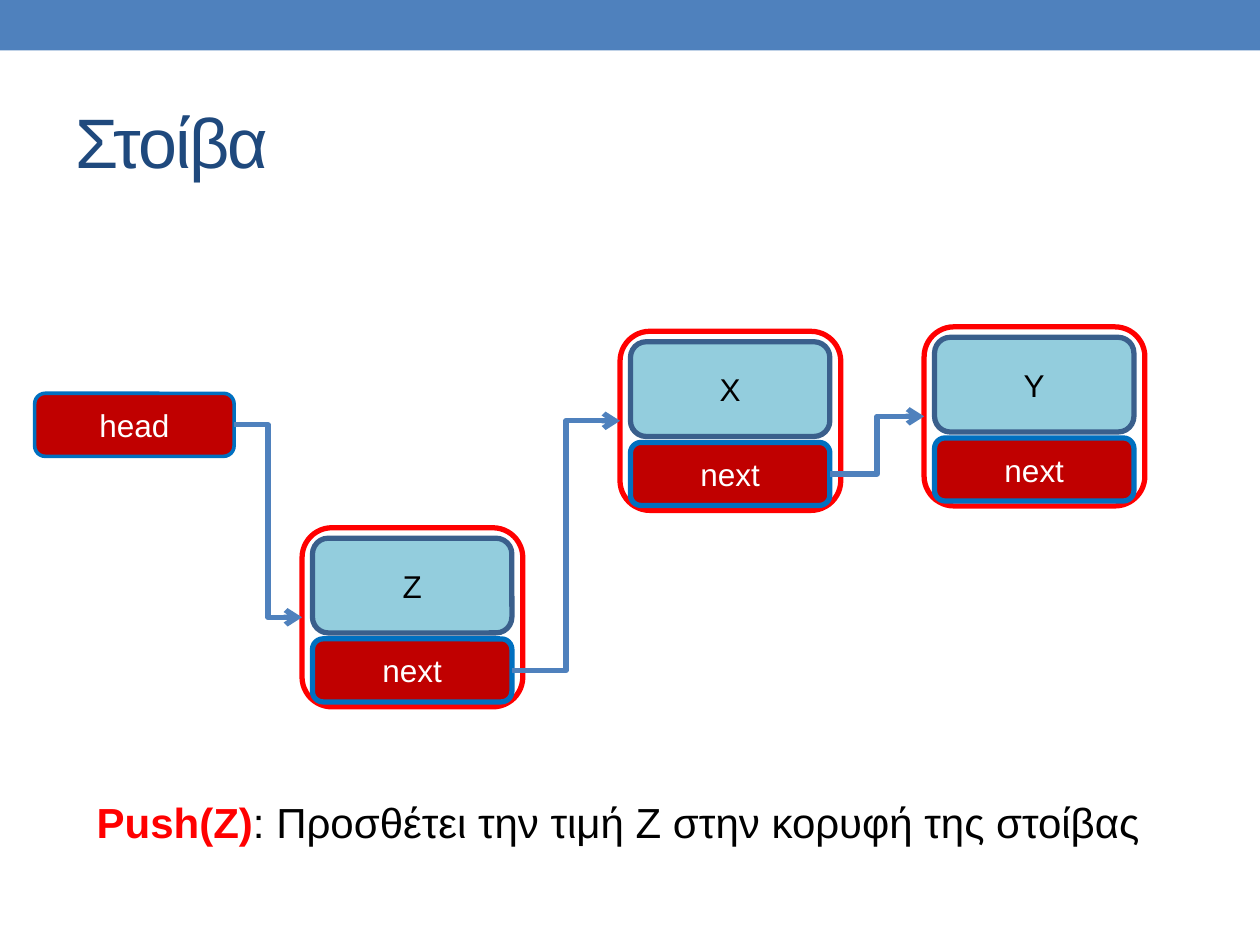
from lxml import etree
from pptx import Presentation
from pptx.dml.color import RGBColor
from pptx.enum import shapes, text
from pptx.oxml.ns import qn
from pptx.util import Cm, Pt

TITLE = "Στοίβα"
NOTE = [("Push(Z)", "red", True),
        (": Προσθέτει την τιμή Z στην κορυφή της στοίβας", "black", False)]
HEAD = ("head", 0.7, 7.93)
NODES = [("X", 12.5, 6.68), ("Y", 18.63, 6.59), ("Z", 6.09, 10.64)]
LINKS = [("X", "Y"), ("Z", "X"), ("head", "Z")]
COLORS = {"blue": "4F81BD", "navy": "1F497D", "red": "FF0000", "dark": "C00000",
          "edge": "0070C0", "aqua": "93CDDD", "slate": "3A5F8C",
          "black": "000000", "white": "FFFFFF"}
WIDE, LOW, TALL = 4.02, 1.27, 1.91
FRAME = (4.45, 3.61)
PAD, DROP = 0.21, 2.24
LEFT, RIGHT = 1, 3  # connection sites


def color(name):
    return RGBColor.from_string(COLORS[name])


def style(font, size, name, bold=False):
    font.name, font.size, font.bold = "Arial", Pt(size), bold
    font.color.rgb = color(name)


def box(parent, x, y, w, h, fill=None, line=None, width=3, label="", ink="white",
        kind=shapes.MSO_SHAPE.ROUNDED_RECTANGLE):
    item = parent.add_shape(kind, Cm(x), Cm(y), Cm(w), Cm(h))
    item.shadow.inherit = False
    if fill:
        item.fill.solid()
        item.fill.fore_color.rgb = color(fill)
    else:
        item.fill.background()
    if line:
        item.line.color.rgb = color(line)
        item.line.width = Pt(width)
    else:
        item.line.fill.background()
    if label:
        frame = item.text_frame
        frame.text = label
        frame.vertical_anchor = text.MSO_ANCHOR.MIDDLE
        para = frame.paragraphs[0]
        para.alignment = text.PP_ALIGN.CENTER
        style(para.font, 18, ink)
    return item


def node(parent, label, x, y):
    """Draw a list node; return its frame and its pointer box."""
    group = parent.add_group_shape().shapes
    frame = box(group, x, y, *FRAME, line="red")
    link = box(group, x + PAD, y + DROP, WIDE, LOW, "dark", "edge", label="next")
    box(group, x + PAD, y + PAD, WIDE, TALL, "aqua", "slate", label=label, ink="black")
    return frame, link


def join(parent, start, end):
    wire = parent.add_connector(shapes.MSO_CONNECTOR.ELBOW, 0, 0, 0, 0)
    wire.begin_connect(start, RIGHT)
    wire.end_connect(end, LEFT)
    wire.line.color.rgb = color("blue")
    wire.line.width = Pt(3)
    etree.SubElement(wire.line._get_or_add_ln(), qn("a:tailEnd"), type="arrow")
    etree.SubElement(wire._element.spPr, qn("a:effectLst"))


def write(parent, x, y, w, h, runs, size, wrap=True):
    frame = parent.add_textbox(Cm(x), Cm(y), Cm(w), Cm(h)).text_frame
    frame.word_wrap = wrap
    for words, name, bold in runs:
        run = frame.paragraphs[0].add_run()
        run.text = words
        style(run.font, size, name, bold)
    return frame


def main():
    deck = Presentation()
    deck.slide_width, deck.slide_height = Cm(25.4), Cm(19.05)
    parts = deck.slides.add_slide(deck.slide_layouts[6]).shapes

    box(parts, 0, 0, 25.4, 1.02, "blue", kind=shapes.MSO_SHAPE.RECTANGLE)
    title = write(parts, 1.27, 1.47, 22.86, 2.74, [(TITLE, "navy", False)], 40)
    title.vertical_anchor = text.MSO_ANCHOR.MIDDLE
    title.paragraphs[0].runs[0].font._element.set("spc", "-100")

    label, x, y = HEAD
    head = box(parts, x, y, WIDE, LOW, "dark", "edge", 2.08, label)
    ends = {label: (head, head)}
    for name, x, y in NODES:
        ends[name] = node(parts, name, x, y)
    for start, end in LINKS:
        join(parts, ends[start][1], ends[end][0])

    note = write(parts, 1.7, 15.93, 22, 1.27, NOTE, 24, wrap=False)
    note.auto_size = text.MSO_AUTO_SIZE.SHAPE_TO_FIT_TEXT
    deck.save("out.pptx")


if __name__ == "__main__":
    main()
